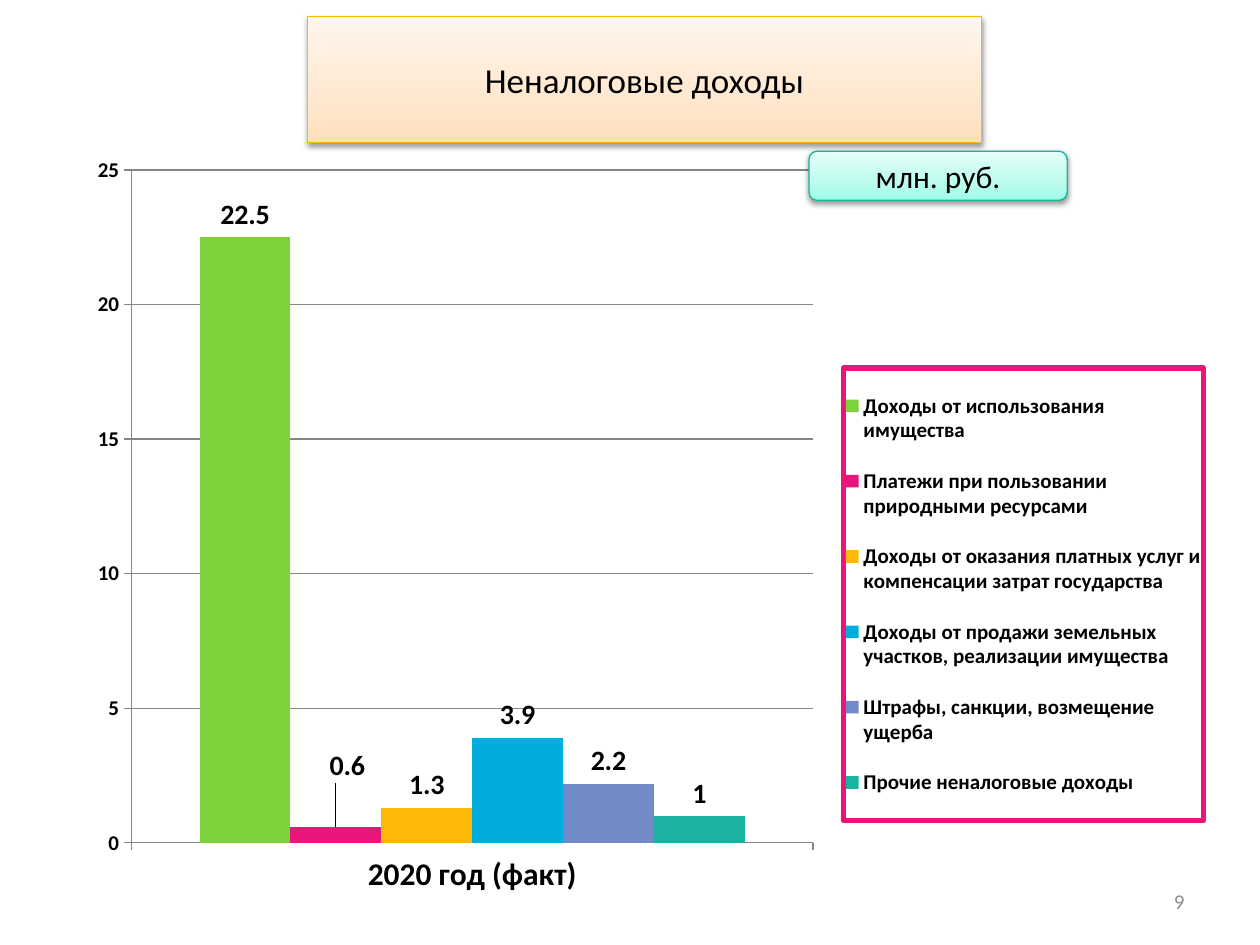
from dataclasses import dataclass
from copy import deepcopy

from lxml import etree
from pptx import Presentation
from pptx import util as u
from pptx.chart import data as chart_data
from pptx.dml import color as dml
from pptx.enum import chart as chart_enum, shapes, text
from pptx.oxml import ns


@dataclass(frozen=True)
class Theme:
    font: str = "Calibri"
    ink: str = "000000"
    muted: str = "8C8C8C"
    grid: str = "868686"
    accent: str = "EA157A"
    orange: tuple = ("FFDFBC", "FFE8D0", "FFF6ED")
    orange_line: str = "FEB604"
    mint: tuple = ("9DFDE8", "BBFCED", "E4FFF9")
    mint_line: str = "16B39E"
    title: int = 20
    unit: int = 18
    category: int = 18
    label: int = 16
    small: int = 12


THEME = Theme()
CATEGORY = "2020 год (факт)"
INCOME = [
    ("Доходы от использования имущества", 22.5, "7FD13B"),
    ("Платежи при пользовании природными ресурсами", 0.6, "EA157A"),
    ("Доходы от оказания платных услуг и компенсации затрат государства", 1.3, "FEB80A"),
    ("Доходы от продажи земельных участков, реализации имущества", 3.9, "00ADDC"),
    ("Штрафы, санкции, возмещение ущерба", 2.2, "738AC8"),
    ("Прочие неналоговые доходы", 1, "1AB39F"),
]


def rgb(value):
    return dml.RGBColor.from_string(value)


def set_all(target, values):
    for name, value in values.items():
        setattr(target, name, value)


def style_font(font, size, color=THEME.ink, bold=False):
    set_all(font, {"name": THEME.font, "size": u.Pt(size), "bold": bold})
    font.color.rgb = rgb(color)


def style_line(line, color, width):
    line.color.rgb = rgb(color)
    line.width = u.Pt(width)


def place(shape, bounds):
    names = ("left", "top", "width", "height")
    set_all(shape, dict(zip(names, map(u.Inches, bounds))))


def write(shape, words, size, align, color=THEME.ink):
    frame = shape.text_frame
    set_all(frame, {"word_wrap": True, "auto_size": text.MSO_AUTO_SIZE.NONE,
                    "vertical_anchor": text.MSO_ANCHOR.MIDDLE})
    para = frame.paragraphs[0]
    para.alignment = align
    span = para.add_run()
    span.text = words
    style_font(span.font, size, color)


def decorate(shape, colors, line_color):
    """Three-stop vertical gradient, thin outline and soft shadow below."""
    shape.fill.gradient()
    shape.fill.gradient_angle = 90
    stops = shape._element.spPr.find(".//" + ns.qn("a:gsLst"))
    stops.insert(1, deepcopy(stops[0]))
    for stop, position, color in zip(shape.fill.gradient_stops, (0, 0.35, 1), colors):
        stop.position = position
        stop.color.rgb = rgb(color)
    style_line(shape.line, line_color, 0.75)
    shape.shadow.inherit = False
    effects = shape._element.spPr.find(ns.qn("a:effectLst"))
    shadow = etree.SubElement(effects, ns.qn("a:outerShdw"), blurRad=str(u.Pt(3.1)),
                              dist=str(u.Pt(1.6)), dir="5400000", rotWithShape="0")
    shade = etree.SubElement(shadow, ns.qn("a:srgbClr"), val=THEME.ink)
    etree.SubElement(shade, ns.qn("a:alpha"), val="38000")


def chart_layout(parent, index, **values):
    """Put a manual layout, in fractions of the chart, into a chart part."""
    for old in parent.findall(ns.qn("c:layout")):
        parent.remove(old)
    layout = etree.Element(ns.qn("c:layout"))
    manual = etree.SubElement(layout, ns.qn("c:manualLayout"))
    for name, value in values.items():
        etree.SubElement(manual, ns.qn("c:" + name), val=str(value))
    parent.insert(index, layout)


def add_title(page, bounds):
    title = page.shapes.title
    place(title, bounds)
    write(title, "Неналоговые доходы", THEME.title, text.PP_ALIGN.CENTER)
    decorate(title, THEME.orange, THEME.orange_line)


def add_unit(page, bounds):
    box = page.shapes.add_shape(shapes.MSO_SHAPE.ROUNDED_RECTANGLE, *map(u.Inches, bounds))
    write(box, "млн. руб.", THEME.unit, text.PP_ALIGN.CENTER)
    decorate(box, THEME.mint, THEME.mint_line)


def add_page_number(page, bounds):
    box = page.shapes.add_textbox(*map(u.Inches, bounds))
    write(box, "9", THEME.small, text.PP_ALIGN.RIGHT, THEME.muted)


def style_axes(chart):
    value_axis, category_axis = chart.value_axis, chart.category_axis
    set_all(value_axis, {"minimum_scale": 0, "maximum_scale": 25, "major_unit": 5,
                         "has_major_gridlines": True})
    style_line(value_axis.major_gridlines.format.line, THEME.grid, 0.75)
    for axis, size in ((value_axis, THEME.small), (category_axis, THEME.category)):
        axis.major_tick_mark = chart_enum.XL_TICK_MARK.OUTSIDE
        style_line(axis.format.line, THEME.grid, 0.75)
        style_font(axis.tick_labels.font, size, bold=True)


def style_series(plot):
    set_all(plot, {"gap_width": 150, "overlap": 0, "vary_by_categories": False})
    for series, (_, _, color) in zip(plot.series, INCOME):
        series.format.fill.solid()
        series.format.fill.fore_color.rgb = rgb(color)
        labels = series.data_labels
        set_all(labels, {"show_value": True,
                         "position": chart_enum.XL_LABEL_POSITION.OUTSIDE_END})
        style_font(labels.font, THEME.label, bold=True)
    # The label of the second column is lifted off its short bar
    lifted = plot.series[1].points[0].data_label
    style_font(lifted.font, THEME.label, bold=True)
    lifted.position = chart_enum.XL_LABEL_POSITION.OUTSIDE_END
    label = plot.series[1]._element.find(".//" + ns.qn("c:dLbl"))
    chart_layout(label, 1, x=0.01, y=-0.05)


def style_legend(chart):
    chart.has_legend = True
    legend = chart.legend
    set_all(legend, {"position": chart_enum.XL_LEGEND_POSITION.RIGHT,
                     "include_in_layout": False})
    style_font(legend.font, THEME.small, bold=True)
    chart_layout(legend._element, 1, xMode="edge", yMode="edge",
                 x=0.674, y=0.294, w=0.315, h=0.59)
    # Outline goes just ahead of the text properties
    frame = etree.Element(ns.qn("c:spPr"))
    line = etree.SubElement(frame, ns.qn("a:ln"), w=str(u.Pt(3)))
    fill = etree.SubElement(line, ns.qn("a:solidFill"))
    etree.SubElement(fill, ns.qn("a:srgbClr"), val=THEME.accent)
    legend._element.find(ns.qn("c:txPr")).addprevious(frame)


def add_income_chart(page, bounds):
    data = chart_data.CategoryChartData()
    data.categories = [CATEGORY]
    for name, value, _ in INCOME:
        data.add_series(name, [value])
    chart = page.shapes.add_chart(chart_enum.XL_CHART_TYPE.COLUMN_CLUSTERED,
                                  *map(u.Inches, bounds), data).chart
    chart.has_title = False
    style_font(chart.font, THEME.small, bold=True)
    style_axes(chart)
    style_series(chart.plots[0])
    style_legend(chart)
    plot_area = chart._chartSpace.find(".//" + ns.qn("c:plotArea"))
    chart_layout(plot_area, 0, layoutTarget="inner", xMode="edge", yMode="edge",
                 x=0.05, y=0.036, w=0.597, h=0.877)


def main():
    deck = Presentation()
    set_all(deck, {"slide_width": u.Inches(10), "slide_height": u.Inches(7.5)})
    page = deck.slides.add_slide(deck.slide_layouts.get_by_name("Title Only"))
    add_page_number(page, (7.17, 6.95, 2.33, 0.4))
    add_income_chart(page, (0.59, 1.13, 9.06, 6.09))
    add_title(page, (2.44, 0.13, 5.35, 1))
    add_unit(page, (6.42, 1.2, 2.05, 0.39))
    deck.save("out.pptx")


if __name__ == "__main__":
    main()
